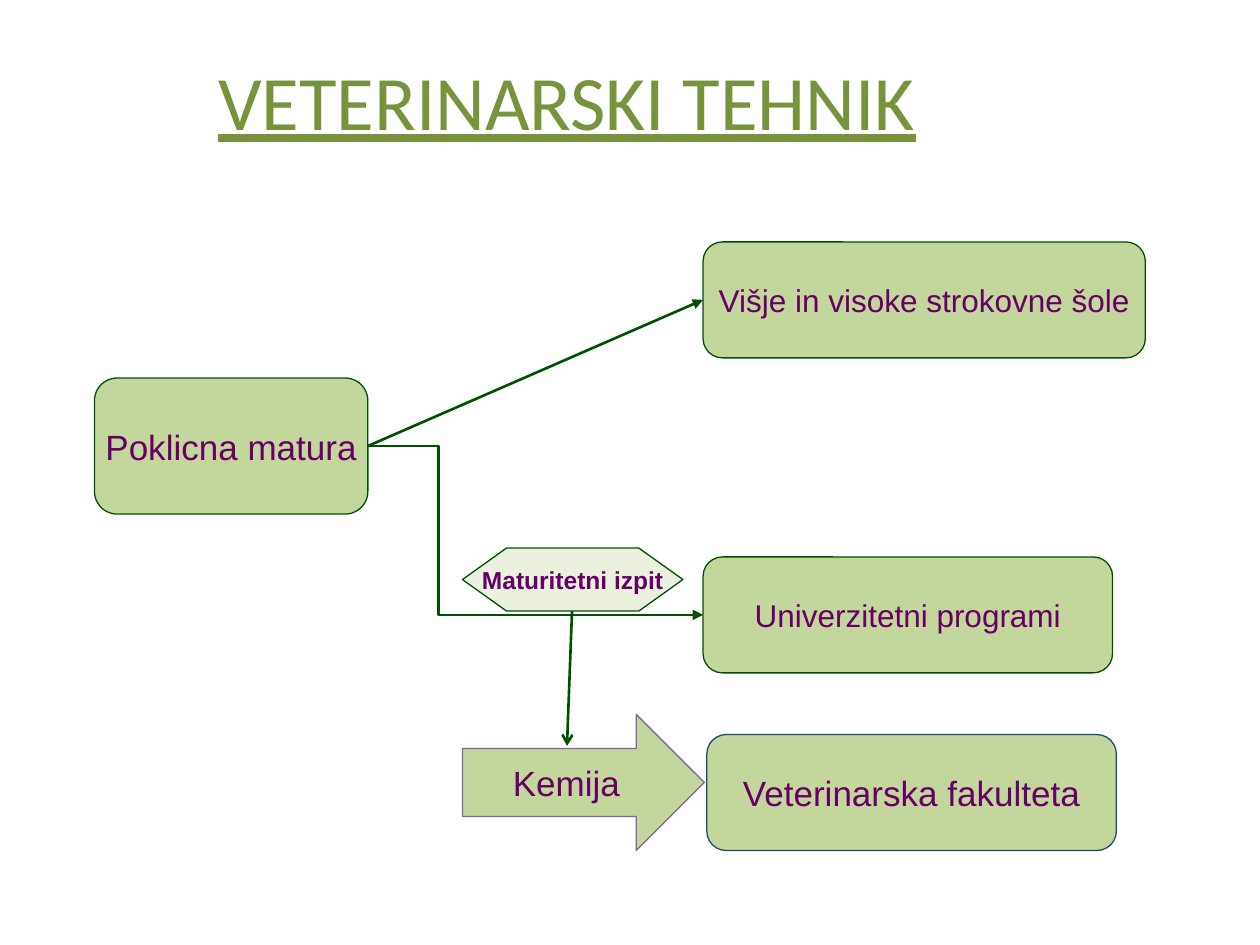
from dataclasses import dataclass

from lxml import etree
from pptx import Presentation
from pptx import util as u
from pptx.dml.color import RGBColor
from pptx.enum import shapes, text
from pptx.oxml.ns import qn

SHAPE = shapes.MSO_SHAPE
CONNECTOR = shapes.MSO_CONNECTOR


@dataclass(frozen=True)
class Theme:
    title: str = "77933C"
    body: str = "660066"
    fill: str = "C3D69B"
    pale: str = "EBF1DE"
    green: str = "005000"
    blue: str = "1F497D"
    violet: str = "8064A2"
    title_font: str = "Calibri"
    body_font: str = "Arial"
    title_size: int = 44
    large: int = 20
    medium: int = 18
    small: int = 14
    outline: float = 0.75
    arrow: float = 1.5


class Diagram:
    def __init__(self, page, theme):
        self.page = page
        self.theme = theme

    def label(self, frame, words, size, color, font, wrap=True):
        frame.word_wrap = wrap
        frame.vertical_anchor = text.MSO_ANCHOR.MIDDLE
        para = frame.paragraphs[0]
        para.text = words
        para.alignment = text.PP_ALIGN.CENTER
        para.font.name = font
        para.font.size = u.Pt(size)
        para.font.color.rgb = RGBColor.from_string(color)
        return para

    def title(self, words, place):
        box = self.page.shapes.add_textbox(*map(u.Inches, place))
        # The deep bottom inset lifts the line above the middle of the box
        box.text_frame.margin_bottom = u.Inches(0.72)
        para = self.label(box.text_frame, words, self.theme.title_size,
                          self.theme.title, self.theme.title_font)
        para.font.underline = True

    def node(self, kind, words, place, size, line=None, fill=None,
             wrap=False, bold=False):
        theme = self.theme
        box = self.page.shapes.add_shape(kind, *map(u.Inches, place))
        box.shadow.inherit = False
        box.fill.solid()
        box.fill.fore_color.rgb = RGBColor.from_string(fill or theme.fill)
        box.line.color.rgb = RGBColor.from_string(line or theme.green)
        box.line.width = u.Pt(theme.outline)
        para = self.label(box.text_frame, words, size, theme.body,
                          theme.body_font, wrap)
        para.font.bold = bold

    def arrow(self, start, end, kind=CONNECTOR.STRAIGHT, head="triangle", bend=None):
        link = self.page.shapes.add_connector(kind, *map(u.Inches, start + end))
        link.line.color.rgb = RGBColor.from_string(self.theme.green)
        link.line.width = u.Pt(self.theme.arrow)
        properties = link._element.spPr
        if bend is not None:
            guides = properties.find(qn("a:prstGeom")).get_or_add_avLst()
            etree.SubElement(guides, qn("a:gd"), name="adj1",
                             fmla=f"val {round(bend * 100000)}")
        etree.SubElement(properties.find(qn("a:ln")), qn("a:tailEnd"), type=head)
        etree.SubElement(properties, qn("a:effectLst"))


def main():
    deck = Presentation()
    deck.slide_width, deck.slide_height = u.Inches(10), u.Inches(7.5)
    theme = Theme()
    diagram = Diagram(deck.slides.add_slide(deck.slide_layouts[6]), theme)

    # Title
    diagram.title("VETERINARSKI TEHNIK", (0.25, 0.5, 8.5, 1.25))

    # Starting point and the paths of study
    diagram.node(SHAPE.FLOWCHART_ALTERNATE_PROCESS, "Poklicna matura",
                 (0.75, 3, 2.17, 1.08), theme.large)
    diagram.node(SHAPE.ROUNDED_RECTANGLE, "Višje in visoke strokovne šole",
                 (5.58, 1.92, 3.51, 0.92), theme.medium)
    diagram.node(SHAPE.ROUNDED_RECTANGLE, "Univerzitetni programi",
                 (5.58, 4.42, 3.25, 0.92), theme.medium)
    diagram.node(SHAPE.ROUNDED_RECTANGLE, "Veterinarska fakulteta",
                 (5.61, 5.83, 3.25, 0.92), theme.large, line=theme.blue, wrap=True)

    # Exam and its subject
    diagram.node(SHAPE.RIGHT_ARROW, "Kemija", (3.67, 5.67, 1.92, 1.08),
                 theme.large, line=theme.violet, wrap=True)
    diagram.node(SHAPE.FLOWCHART_PREPARATION, "Maturitetni izpit",
                 (3.67, 4.35, 1.75, 0.5), theme.small, fill=theme.pale, bold=True)

    # Arrows
    matura = (2.92, 3.54)
    diagram.arrow(matura, (5.58, 2.38))
    diagram.arrow(matura, (5.58, 4.88), CONNECTOR.ELBOW, bend=0.21)
    diagram.arrow((4.54, 4.85), (4.5, 5.92), head="arrow")

    deck.save("out.pptx")


if __name__ == "__main__":
    main()
